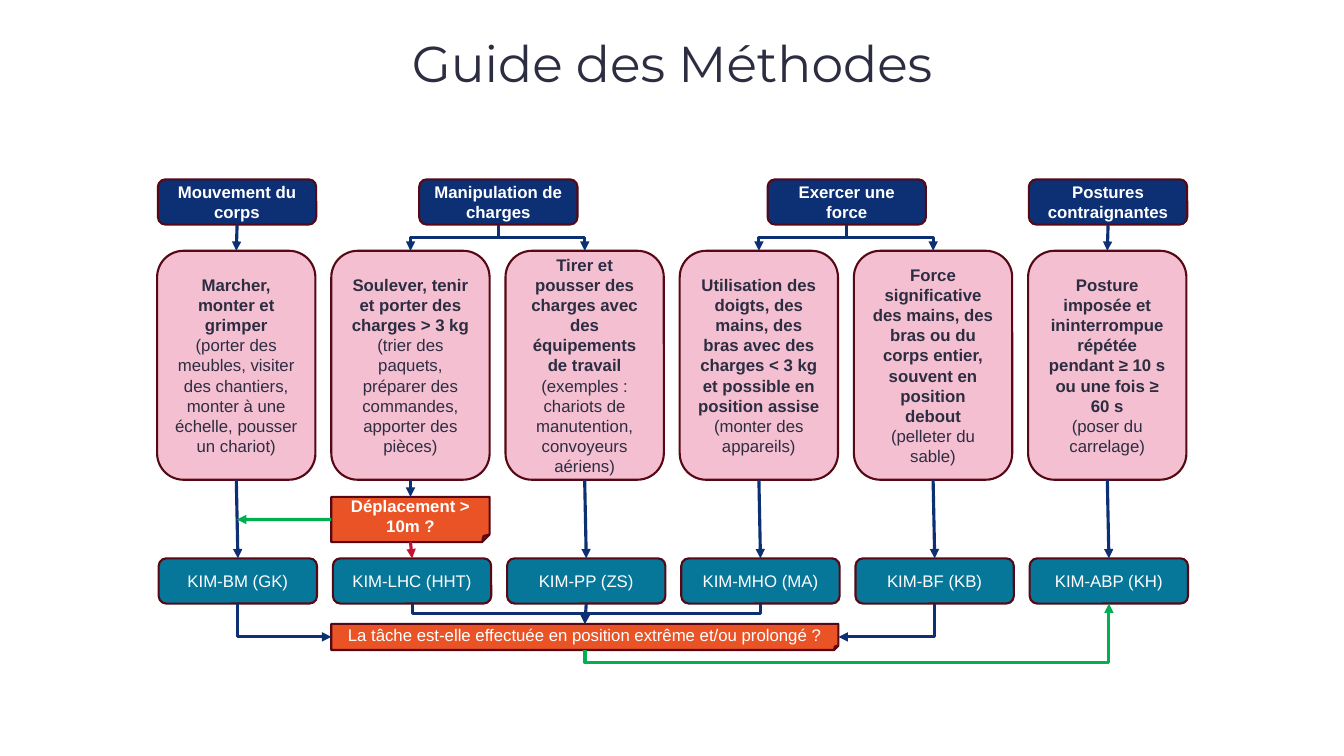
from lxml.etree import SubElement
from pptx import Presentation
from pptx.dml.color import RGBColor
from pptx.enum.shapes import MSO_CONNECTOR, MSO_SHAPE
from pptx.enum.text import MSO_ANCHOR, MSO_AUTO_SIZE, PP_ALIGN
from pptx.oxml.ns import qn
from pptx.util import Cm, Pt

COLORS = {"navy": "0D3075", "pink": "F4C0D1", "teal": "067699", "orange": "E95325",
          "border": "560815", "ink": "2D2D42", "white": "FFFFFF",
          "green": "00B050", "red": "C41230"}
TOP, LEFT, BOTTOM, RIGHT = range(4)  # connection sites

# Column grid, in cm
COL_X, PITCH, BOX_W, LABEL_H = 3.96, 4.39, 3.99, 1.14
SHIFT = 0.04

# Category, columns it covers
CATEGORIES = [
    ("Mouvement du corps", [0]),
    ("Manipulation de charges", [1, 2]),
    ("Exercer une force", [3, 4]),
    ("Postures contraignantes", [5]),
]

# Activity, examples, method
ACTIVITIES = [
    ("Marcher, monter et grimper",
     "(porter des meubles, visiter des chantiers, monter à une échelle, pousser un chariot)",
     "KIM-BM (GK)"),
    ("Soulever, tenir et porter des charges > 3 kg",
     "(trier des paquets, préparer des commandes, apporter des pièces)",
     "KIM-LHC (HHT)"),
    ("Tirer et pousser des charges avec des équipements de travail",
     "(exemples : chariots de manutention, convoyeurs aériens)",
     "KIM-PP (ZS)"),
    ("Utilisation des doigts, des mains, des bras avec des charges < 3 kg "
     "et possible en position assise",
     "(monter des appareils)",
     "KIM-MHO (MA)"),
    ("Force significative des mains, des bras ou du corps entier, "
     "souvent en position debout",
     "(pelleter du sable)",
     "KIM-BF (KB)"),
    ("Posture imposée et ininterrompue répétée pendant ≥ 10 s ou une fois ≥ 60 s",
     "(poser du carrelage)",
     "KIM-ABP (KH)"),
]


def rgb(name):
    return RGBColor.from_string(COLORS[name])


class Flowchart:
    """Style of the chart and the slide it is drawn on."""

    def __init__(self, slide):
        self.slide = slide
        self.font = {"name": "Arial", "size": Pt(12)}

    def add_text(self, p, text, color, **fmt):
        p.alignment = PP_ALIGN.CENTER
        r = p.add_run()
        r.text = text
        for key, value in {**self.font, **fmt}.items():
            setattr(r.font, key, value)
        r.font.color.rgb = rgb(color)

    def title(self, text):
        sp = self.slide.shapes.title
        frame = {"left": Cm(3.94), "top": Cm(0.23), "width": Cm(26), "height": Cm(4.29)}
        for key, value in frame.items():
            setattr(sp, key, value)
        tf = sp.text_frame
        body = {"auto_size": MSO_AUTO_SIZE.NONE, "word_wrap": True,
                "vertical_anchor": MSO_ANCHOR.MIDDLE, "margin_bottom": Cm(1.52)}
        for key, value in body.items():
            setattr(tf, key, value)
        p = tf.paragraphs[0]
        p.line_spacing = 0.9
        self.add_text(p, text, "ink", name="Montserrat", size=Pt(36))

    def box(self, x, y, w, h, fill, lines, color="white", kind=MSO_SHAPE.ROUNDED_RECTANGLE):
        """Add a filled shape; lines holds (text, bold) pairs."""
        sp = self.slide.shapes.add_shape(kind, Cm(x), Cm(y), Cm(w), Cm(h))
        sp.shadow.inherit = False
        sp.fill.solid()
        sp.fill.fore_color.rgb = rgb(fill)
        sp.line.color.rgb = rgb("border")
        sp.line.width = Pt(1.5)
        tf = sp.text_frame
        tf.word_wrap = True
        tf.vertical_anchor = MSO_ANCHOR.MIDDLE
        for i, (text, bold) in enumerate(lines):
            p = tf.add_paragraph() if i else tf.paragraphs[0]
            self.add_text(p, text, color, bold=bold)
        return sp

    def arrow(self, start, end=None, point=(0, 0), color="navy"):
        """Join (shape, site) to another (shape, site), or to a free point."""
        con = self.slide.shapes.add_connector(MSO_CONNECTOR.STRAIGHT, 0, 0, *point)
        con.begin_connect(*start)
        if end:
            con.end_connect(*end)
        con.line.color.rgb = rgb(color)
        con.line.width = Pt(2.25)
        spPr = con._element.spPr
        SubElement(spPr.find(qn("a:ln")), qn("a:tailEnd"), type="triangle")
        SubElement(spPr, qn("a:effectLst"))
        return con

    def elbow(self, start, end, preset="bentConnector3", bend=50000, color="navy"):
        """Add a bent arrow that leaves its start vertically."""
        con = self.arrow(start, end, color=color)
        dx, dy = con.end_x - con.begin_x, con.end_y - con.begin_y
        mid_x, mid_y = con.begin_x + dx // 2, con.begin_y + dy // 2
        w, h = abs(dy), abs(dx)
        frame = {"left": mid_x - w // 2, "top": mid_y - h // 2, "width": w, "height": h}
        for key, value in frame.items():
            setattr(con, key, value)
        spPr = con._element.spPr
        turn = 270 if dx > 0 and dy > 0 else 90
        flips = {"rot": turn * 60000, "flipH": int(dx > 0), "flipV": int(dy < 0)}
        for key, value in flips.items():
            spPr.find(qn("a:xfrm")).set(key, str(value))
        geom = spPr.find(qn("a:prstGeom"))
        geom.set("prst", preset)
        if preset == "bentConnector3":
            SubElement(geom.find(qn("a:avLst")), qn("a:gd"), name="adj1", fmla=f"val {bend}")


def main():
    prs = Presentation()
    prs.slide_width, prs.slide_height = Cm(33.87), Cm(19.05)
    chart = Flowchart(prs.slides.add_slide(prs.slide_layouts[5]))
    chart.title("Guide des Méthodes")

    # Activities and methods, one column each
    activities, methods = [], []
    for i, (activity, examples, method) in enumerate(ACTIVITIES):
        x = COL_X + i * PITCH
        activities.append(chart.box(x, 6.32, BOX_W, 5.77, "pink",
                                    [(activity, True), (examples, False)], "ink"))
        methods.append(chart.box(x + SHIFT, 14.07, BOX_W, LABEL_H, "teal", [(method, False)]))

    # Categories, centred over their columns
    for text, cols in CATEGORIES:
        x = COL_X + PITCH * sum(cols) / len(cols) + SHIFT / 2
        category = chart.box(x, 4.52, BOX_W, LABEL_H, "navy", [(text, True)])
        connect = chart.elbow if len(cols) > 1 else chart.arrow
        for col in cols:
            connect((category, BOTTOM), (activities[col], TOP))

    # Questions
    x = COL_X + PITCH
    distance = chart.box(x, 12.52, BOX_W, LABEL_H, "orange",
                         [("Déplacement > 10m ?", True)], kind=MSO_SHAPE.FOLDED_CORNER)
    posture = chart.box(x, 15.72, 12.78, 0.66, "orange",
                        [("La tâche est-elle effectuée en position extrême et/ou prolongé ?", False)],
                        kind=MSO_SHAPE.FOLDED_CORNER)

    # Activity to method, with the distance question in the second column
    for i, (activity, method) in enumerate(zip(activities, methods)):
        target = (distance, TOP) if i == 1 else (method, TOP)
        chart.arrow((activity, BOTTOM), target)
    chart.arrow((distance, LEFT), point=(Cm(5.97), Cm(13.09)), color="green")
    chart.arrow((distance, BOTTOM), (methods[1], TOP), color="red")

    # Method to posture question, and on to the last method
    for i in (1, 3):
        chart.elbow((methods[i], BOTTOM), (posture, TOP))
    chart.arrow((methods[2], BOTTOM), (posture, TOP))
    for i, side in ((0, LEFT), (4, RIGHT)):
        chart.elbow((methods[i], BOTTOM), (posture, side), "bentConnector2")
    chart.elbow((posture, BOTTOM), (methods[5], BOTTOM), bend=-27300, color="green")

    prs.save("out.pptx")


if __name__ == "__main__":
    main()
